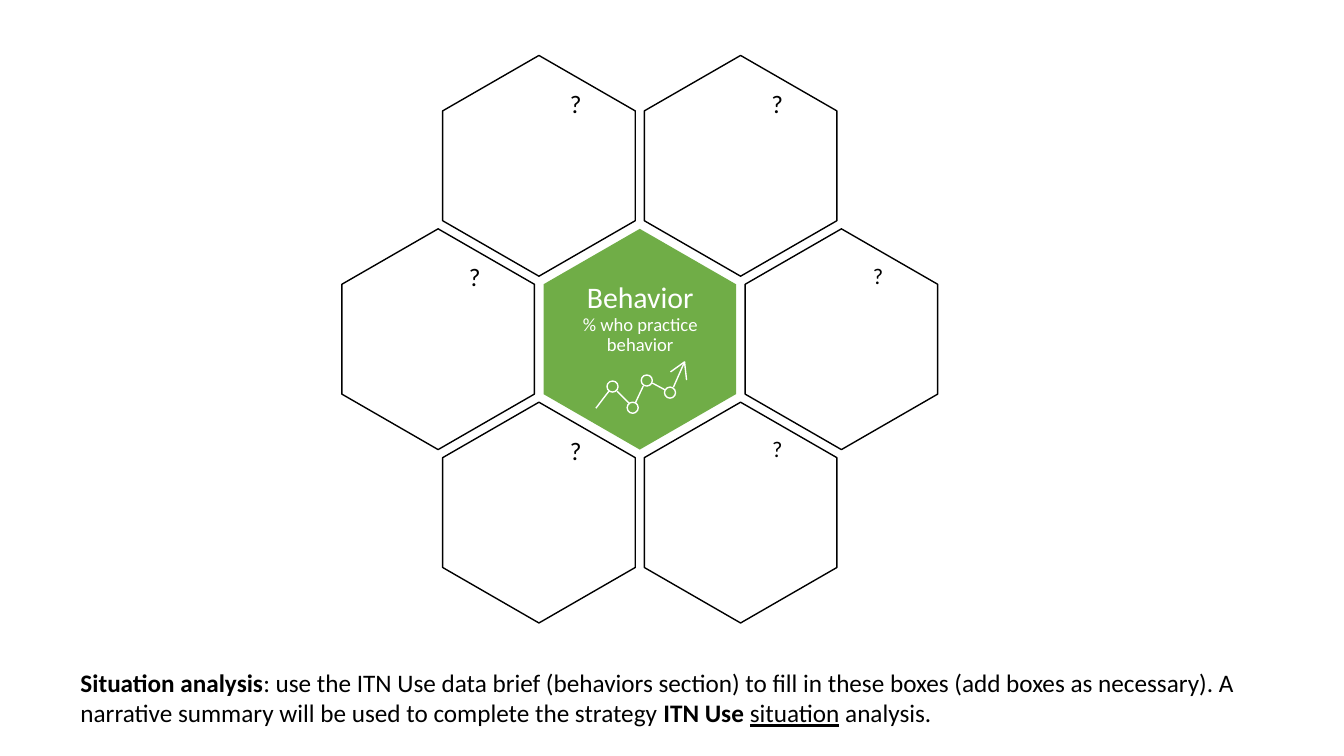
from dataclasses import dataclass

from lxml import etree
from pptx import Presentation
from pptx.dml.color import RGBColor
from pptx.enum.shapes import MSO_CONNECTOR as Connector, MSO_SHAPE as Shape
from pptx.enum.text import MSO_ANCHOR as Anchor, PP_ALIGN as Align
from pptx.oxml.ns import qn
from pptx.util import Inches, Pt


@dataclass(frozen=True)
class Theme:
    font: str = "Calibri"
    ink: RGBColor = RGBColor(0x00, 0x00, 0x00)
    paper: RGBColor = RGBColor(0xFF, 0xFF, 0xFF)
    accent: RGBColor = RGBColor(0x70, 0xAD, 0x47)
    line: float = 1
    body: float = 18
    small_mark: float = 16
    title: float = 21.3
    subtitle: float = 13.3


@dataclass(frozen=True)
class Box:
    left: float
    top: float
    width: float
    height: float

    def inside(self, left, top, width, height):
        return Box(self.left + left, self.top + top, width, height)

    def lengths(self):
        return [Inches(value) for value in (self.left, self.top, self.width, self.height)]


THEME = Theme()
HEXAGON_LENGTH, HEXAGON_WIDTH = 2.19, 1.91
COLUMN_STEP, ROW_STEP = 1.0, 1.72
OUTER_CELLS = [
    (-1, -1, THEME.body),
    (-1, 1, THEME.body),
    (1, 1, THEME.small_mark),
    (-2, 0, THEME.body),
    (1, -1, THEME.body),
    (2, 0, THEME.small_mark),
]


def style_line(shape, color):
    shape.line.color.rgb = color
    shape.line.width = Pt(THEME.line)


def add_run(paragraph, text, size, color, bold=False, underline=False):
    run = paragraph.add_run()
    run.text = text
    font = run.font
    font.name, font.size = THEME.font, Pt(size)
    font.color.rgb = color
    font.bold, font.underline = bold, underline


def add_text_frame(slide, box, insets):
    frame = slide.shapes.add_textbox(*box.lengths()).text_frame
    frame.word_wrap = True
    frame.vertical_anchor = Anchor.TOP
    (frame.margin_left, frame.margin_top,
     frame.margin_right, frame.margin_bottom) = [Inches(inset) for inset in insets]
    return frame


def add_label(slide, box, lines, color):
    frame = add_text_frame(slide, box, (0.73, 0, 0, 0))
    for index, (text, size) in enumerate(lines):
        paragraph = frame.add_paragraph() if index else frame.paragraphs[0]
        paragraph.alignment = Align.CENTER
        paragraph.line_spacing = 0.9
        add_run(paragraph, text, size, color)


def add_hexagon(slide, box):
    hexagon = slide.shapes.add_shape(Shape.HEXAGON, *box.lengths())
    hexagon.adjustments[0] = 0.288
    hexagon.rotation = 90
    hexagon.shadow.inherit = False
    return hexagon


def add_outer_cell(slide, box, mark_size):
    hexagon = add_hexagon(slide, box)
    hexagon.fill.background()
    style_line(hexagon, THEME.ink)
    add_label(slide, box.inside(0.46, 0.22, 1.27, 1.46), [("?", mark_size)], THEME.ink)


def add_trend_icon(slide, box):
    group = slide.shapes.add_group_shape()

    def place(point):
        return Inches(box.left + point[0]), Inches(box.top + point[1])

    tip = (0.88, 0)
    builder = group.shapes.build_freeform(*place((0.9, 0.18)), scale=1.0)
    builder.add_line_segments([place(tip), place((0.74, 0.1))], close=False)
    arrowhead = builder.convert_to_shape()
    arrowhead.fill.background()
    arrowhead.shadow.inherit = False
    style_line(arrowhead, THEME.paper)

    segments = [
        ((0.13, 0.29), (0, 0.46)),
        ((0.33, 0.41), (0.21, 0.29)),
        ((0.47, 0.24), (0.39, 0.41)),
        ((0.69, 0.28), (0.56, 0.21)),
        (tip, (0.77, 0.25)),
    ]
    for start, end in segments:
        connector = group.shapes.add_connector(Connector.STRAIGHT, *place(start), *place(end))
        style_line(connector, THEME.paper)
        etree.SubElement(connector.element.spPr, qn("a:effectLst"))

    for left, top in [(0.68, 0.25), (0.45, 0.13), (0.31, 0.4), (0.11, 0.19)]:
        node = group.shapes.add_shape(Shape.OVAL, *box.inside(left, top, 0.11, 0.11).lengths())
        node.fill.background()
        node.shadow.inherit = False
        style_line(node, THEME.paper)


def add_center_cell(slide, box):
    hexagon = add_hexagon(slide, box)
    hexagon.fill.solid()
    hexagon.fill.fore_color.rgb = THEME.accent
    hexagon.line.fill.background()
    lines = [("Behavior", THEME.title), ("% who practice behavior", THEME.subtitle)]
    add_label(slide, box.inside(-0.26, 0.4, 1.99, 1.46), lines, THEME.paper)
    add_trend_icon(slide, box.inside(0.66, 1.18, 0.9, 0.51))


def add_honeycomb(slide, box):
    center = box.inside(
        (box.width - HEXAGON_LENGTH) / 2, (box.height - HEXAGON_WIDTH) / 2,
        HEXAGON_LENGTH, HEXAGON_WIDTH,
    )
    for column, row, mark_size in OUTER_CELLS:
        cell = center.inside(column * COLUMN_STEP, row * ROW_STEP, HEXAGON_LENGTH, HEXAGON_WIDTH)
        add_outer_cell(slide, cell, mark_size)
    add_center_cell(slide, center)


def add_instruction(slide, box):
    paragraph = add_text_frame(slide, box, (0.1, 0.05, 0.1, 0.05)).paragraphs[0]
    runs = [
        ("Situation analysis", True, False),
        (": use the ITN Use data brief (behaviors section) to fill in these boxes "
         "(add boxes as necessary). A narrative summary will be used to complete "
         "the strategy ", False, False),
        ("ITN Use ", True, False),
        ("situation", False, True),
        (" analysis.", False, False),
    ]
    for text, bold, underline in runs:
        add_run(paragraph, text, THEME.body, THEME.ink, bold, underline)


def main():
    presentation = Presentation()
    presentation.slide_width, presentation.slide_height = Inches(13.33), Inches(7.5)
    slide = presentation.slides.add_slide(presentation.slide_layouts[6])
    add_honeycomb(slide, Box(3.25, 0.69, 6.19, 5.35))
    add_instruction(slide, Box(0.7, 6.57, 12.16, 0.71))
    presentation.save("out.pptx")


if __name__ == "__main__":
    main()
